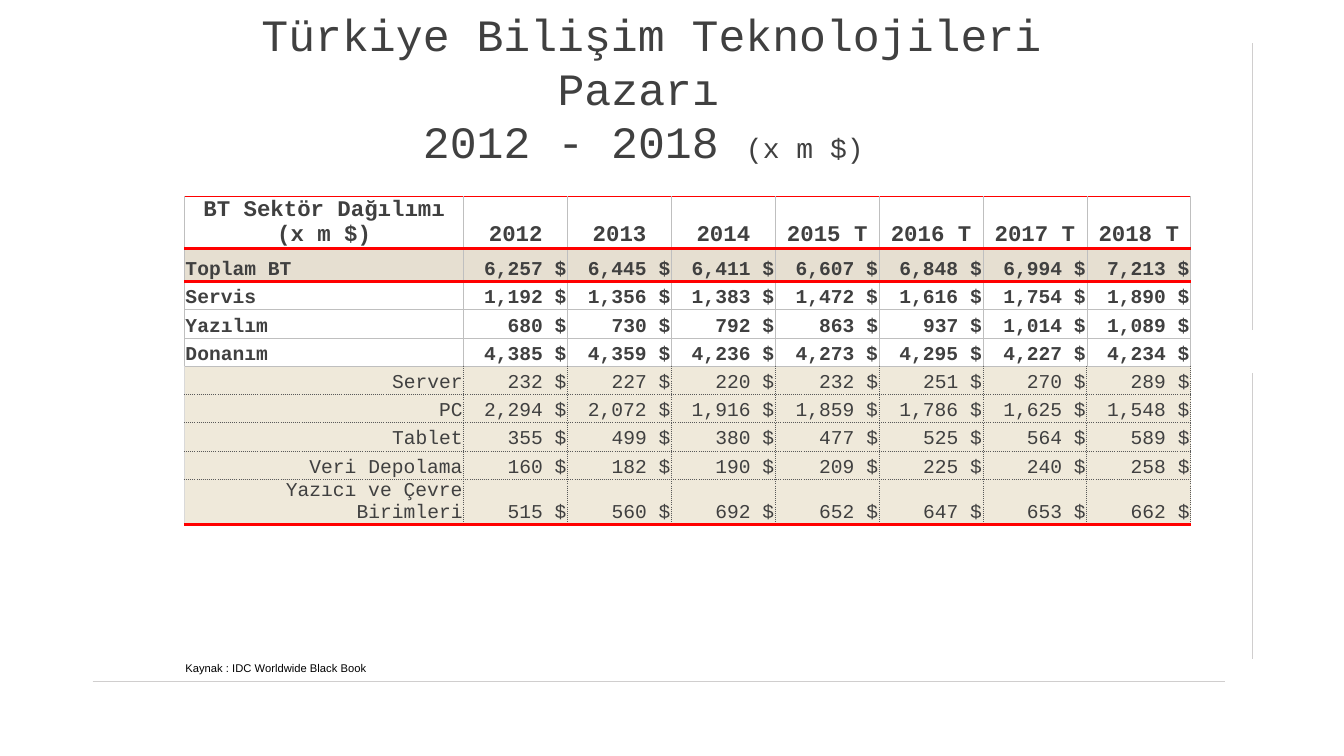
from dataclasses import dataclass

from lxml import etree
from pptx import Presentation
from pptx.dml.color import RGBColor
from pptx.enum.shapes import MSO_CONNECTOR
from pptx.enum.text import MSO_ANCHOR, MSO_AUTO_SIZE, PP_ALIGN
from pptx.oxml.ns import qn
from pptx.util import Inches, Pt

STRAIGHT = MSO_CONNECTOR.STRAIGHT
MIDDLE, BOTTOM = MSO_ANCHOR.MIDDLE, MSO_ANCHOR.BOTTOM
LEFT, CENTER, RIGHT = PP_ALIGN.LEFT, PP_ALIGN.CENTER, PP_ALIGN.RIGHT
NO_AUTOFIT, GROW = MSO_AUTO_SIZE.NONE, MSO_AUTO_SIZE.SHAPE_TO_FIT_TEXT
TITLE_ONLY = 5


@dataclass(frozen=True)
class Theme:
    font: str = "Courier New"
    source_font: str = "Arial"
    text: str = "404040"
    source_text: str = "000000"
    rule: str = "D0CECE"
    plain_fill: str = "FFFFFF"
    total_fill: str = "E6DFD1"
    detail_fill: str = "EFE9DA"
    title_size: float = 32
    unit_size: float = 20
    header_size: float = 16
    body_size: float = 14
    source_size: float = 8
    # Borders: colour, width in points, dash
    red_thin: tuple = ("FF0000", 0.5, "solid")
    red_thick: tuple = ("FF0000", 2, "solid")
    grey: tuple = ("BFBFBF", 0.5, "solid")
    pale: tuple = ("D9D9D9", 1, "solid")
    dotted: tuple = ("595959", 0.5, "sysDot")


class SlideBuilder:
    def __init__(self, presentation, theme):
        self.theme = theme
        self.slide = presentation.slides.add_slide(
            presentation.slide_layouts[TITLE_ONLY])

    def format_run(self, run, size, font=None, color=None, bold=False):
        run.font.name = font or self.theme.font
        run.font.size = Pt(size)
        run.font.bold = bold
        run.font.color.rgb = RGBColor.from_string(color or self.theme.text)

    def title(self, left, top, width, height, paragraphs):
        shape = self.slide.shapes.title
        shape.left, shape.top = Inches(left), Inches(top)
        shape.width, shape.height = Inches(width), Inches(height)
        frame = shape.text_frame
        frame.auto_size = NO_AUTOFIT
        frame.word_wrap = True
        frame.vertical_anchor = MIDDLE
        frame.text = "\n".join("" for _ in paragraphs)
        for paragraph, runs in zip(frame.paragraphs, paragraphs):
            paragraph.alignment = CENTER
            for text, size in runs:
                run = paragraph.add_run()
                run.text = text
                self.format_run(run, size)

    def rule(self, x1, y1, x2, y2, width):
        line = self.slide.shapes.add_connector(
            STRAIGHT, Inches(x1), Inches(y1), Inches(x2), Inches(y2))
        line.line.color.rgb = RGBColor.from_string(self.theme.rule)
        line.line.width = Pt(width)
        etree.SubElement(line._element.spPr, qn("a:effectLst"))

    def source(self, left, top, width, height, text):
        box = self.slide.shapes.add_textbox(
            Inches(left), Inches(top), Inches(width), Inches(height))
        frame = box.text_frame
        frame.word_wrap = False
        frame.auto_size = GROW
        frame.text = text
        self.format_run(frame.paragraphs[0].runs[0], self.theme.source_size,
                        self.theme.source_font, self.theme.source_text)

    def table(self, left, top, column_widths, row_heights):
        shape = self.slide.shapes.add_table(
            len(row_heights), len(column_widths), Inches(left), Inches(top),
            Inches(sum(column_widths)), Inches(sum(row_heights)))
        table = shape.table
        table.first_row = table.horz_banding = False
        for column, width in zip(table.columns, column_widths):
            column.width = Inches(width)
        for row, height in zip(table.rows, row_heights):
            row.height = Inches(height)
        return table

    def cell(self, cell, text, size, bold, alignment, fill, borders):
        cell.margin_left = cell.margin_right = cell.margin_top = Inches(0.01)
        cell.margin_bottom = 0
        cell.vertical_anchor = BOTTOM
        cell.text = text
        paragraph = cell.text_frame.paragraphs[0]
        paragraph.alignment = alignment
        self.format_run(paragraph.runs[0], size, bold=bold)
        # Borders come before the fill in the cell properties
        properties = cell._tc.get_or_add_tcPr()
        for side, (color, width, dash) in zip("LRTB", borders):
            line = etree.SubElement(properties, qn(f"a:ln{side}"), w=str(Pt(width)))
            solid = etree.SubElement(line, qn("a:solidFill"))
            etree.SubElement(solid, qn("a:srgbClr"), val=color)
            etree.SubElement(line, qn("a:prstDash"), val=dash)
        cell.fill.solid()
        cell.fill.fore_color.rgb = RGBColor.from_string(fill)


HEADER = ["BT Sektör Dağılımı (x m $)", "2012", "2013", "2014",
          "2015 T", "2016 T", "2017 T", "2018 T"]
MARKET = [
    ("Toplam BT", [6257, 6445, 6411, 6607, 6848, 6994, 7213]),
    ("Servis", [1192, 1356, 1383, 1472, 1616, 1754, 1890]),
    ("Yazılım", [680, 730, 792, 863, 937, 1014, 1089]),
    ("Donanım", [4385, 4359, 4236, 4273, 4295, 4227, 4234]),
    ("Server", [232, 227, 220, 232, 251, 270, 289]),
    ("PC", [2294, 2072, 1916, 1859, 1786, 1625, 1548]),
    ("Tablet", [355, 499, 380, 477, 525, 564, 589]),
    ("Veri Depolama", [160, 182, 190, 209, 225, 240, 258]),
    ("Yazıcı ve Çevre Birimleri", [515, 560, 692, 652, 647, 653, 662]),
]
TOTAL_ROW, FIRST_DETAIL_ROW = 1, 5


def add_market_table(builder):
    theme = builder.theme
    rows = [HEADER] + [[name] + [f"{value:,} $" for value in values]
                       for name, values in MARKET]
    table = builder.table(1.83, 1.95, [2.77] + [1.03] * 7,
                          [0.37, 0.33] + [0.28] * 8)
    # Horizontal borders from the top edge to the bottom edge
    edges = ([theme.red_thin] + [theme.red_thick] * 2 + [theme.grey] * 3
             + [theme.dotted] * 4 + [theme.red_thick])
    for row_index, row in enumerate(rows):
        is_header = row_index == 0
        is_detail = row_index >= FIRST_DETAIL_ROW
        fill = theme.detail_fill if is_detail else theme.plain_fill
        if row_index == TOTAL_ROW:
            fill = theme.total_fill
        inner = theme.dotted if is_detail else theme.grey
        outer = theme.pale if is_detail else theme.grey
        for column_index, text in enumerate(row):
            is_name = column_index == 0
            alignment = LEFT if is_name and not is_detail else RIGHT
            builder.cell(
                table.cell(row_index, column_index), text,
                theme.header_size if is_header else theme.body_size,
                not is_detail, CENTER if is_header else alignment, fill,
                (outer if is_name else inner, inner,
                 edges[row_index], edges[row_index + 1]))


def main():
    presentation = Presentation()
    presentation.slide_width = Inches(13.33)
    presentation.slide_height = Inches(7.5)
    theme = Theme()
    builder = SlideBuilder(presentation, theme)

    # Frame rules
    for top in (0.43, 3.7):
        builder.rule(12.42, top, 12.42, top + 2.84, 0.25)
    builder.rule(0.92, 6.76, 12.15, 6.76, 0.5)

    # Table and its source
    add_market_table(builder)
    builder.source(1.74, 6.51, 2.05, 0.24, "Kaynak : IDC Worldwide Black Book")

    # Title
    builder.title(1.93, 0.38, 9.07, 0.97, [
        [("Türkiye Bilişim Teknolojileri Pazarı ", theme.title_size)],
        [("2012 - 2018 ", theme.title_size), ("(x m $) ", theme.unit_size)],
    ])
    presentation.save("out.pptx")


if __name__ == "__main__":
    main()
